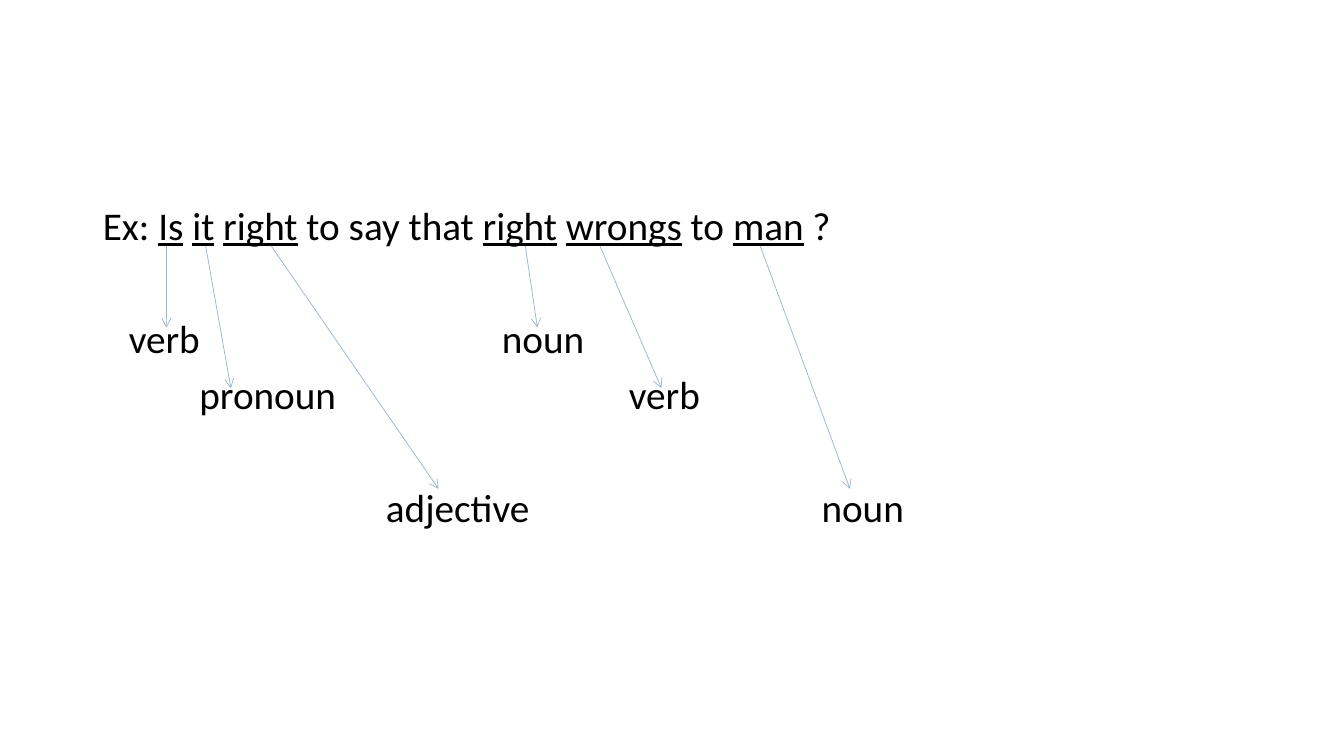
import pptx
import pptx.dml.color
import pptx.enum.shapes
import pptx.enum.text
import pptx.oxml
import pptx.oxml.ns
import pptx.util

Inches, Pt = pptx.util.Inches, pptx.util.Pt
RGB = pptx.dml.color.RGBColor.from_string

# (text, underlined)
SENTENCE = [
    ("Ex: ", False), ("Is", True), (" ", False), ("it", True), (" ", False),
    ("right", True), (" to say that ", False), ("right", True), (" ", False),
    ("wrongs", True), (" to ", False), ("man", True), (" ?", False),
]
# Each row: lines below the sentence, arrow tip height, labels.
# Each label: text, left edge, arrow start x, arrow tip x (inches).
LABEL_ROWS = [
    (2, 3.25, [("verb", 1.28, 1.65, 1.65), ("noun", 4.98, 5.21, 5.33)]),
    (3, 3.85, [("pronoun", 1.98, 2.04, 2.29), ("verb", 6.24, 5.95, 6.56)]),
    (5, 4.85, [("adjective", 3.83, 2.69, 4.35), ("noun", 8.15, 7.54, 8.43)]),
]
THEME = {
    "font": {"name": "Calibri", "size": Pt(28)},
    "text": RGB("000000"),
    "arrow": RGB("94B6D2"),
    "arrow_width": Pt(0.5),
}
BODY = {"left": 0.92, "top": 2, "width": 11.5, "height": 4.76}
FRAME = {
    "word_wrap": True,
    "auto_size": pptx.enum.text.MSO_AUTO_SIZE.NONE,
    "vertical_anchor": pptx.enum.text.MSO_ANCHOR.TOP,
}
PARAGRAPH = {"line_spacing": 0.9, "space_before": Pt(0)}
INSET = 0.1
LINE_PITCH = 0.56
LABEL_WIDTH, LABEL_HEIGHT = 1.8, 0.55
ARROW_TOP = 2.44
NS = pptx.oxml.ns.nsdecls("a")


def set_all(target, values):
    for name, value in values.items():
        setattr(target, name, value)


def write_line(sp, runs):
    """Fill a shape with one paragraph of (text, underlined) runs."""
    tf = sp.text_frame
    set_all(tf, FRAME)
    p = tf.paragraphs[0]
    set_all(p, PARAGRAPH)
    for text, underlined in runs:
        r = p.add_run()
        r.text = text
        set_all(r.font, THEME["font"])
        r.font.color.rgb = THEME["text"]
        r.font.underline = underlined
    return p


def remove_bullet(p):
    pPr = p._p.get_or_add_pPr()
    pPr.set("marL", "0")
    pPr.set("indent", "0")
    pPr.append(pptx.oxml.parse_xml(f"<a:buNone {NS}/>"))


def add_label(shapes, text, left, top):
    sp = shapes.add_textbox(
        *map(Inches, (left - INSET, top, LABEL_WIDTH, LABEL_HEIGHT)))
    write_line(sp, [(text, False)])


def add_arrow(shapes, x1, y1, x2, y2):
    arrow = shapes.add_connector(
        pptx.enum.shapes.MSO_CONNECTOR.STRAIGHT, *map(Inches, (x1, y1, x2, y2)))
    arrow.line.color.rgb = THEME["arrow"]
    arrow.line.width = THEME["arrow_width"]
    arrow.line._get_or_add_ln().append(
        pptx.oxml.parse_xml(f'<a:tailEnd {NS} type="arrow"/>'))
    arrow._element.spPr.append(pptx.oxml.parse_xml(f"<a:effectLst {NS}/>"))


def main():
    prs = pptx.Presentation()
    prs.slide_width, prs.slide_height = Inches(13.33), Inches(7.5)
    s = prs.slides.add_slide(prs.slide_layouts[1])
    title = s.shapes.title._element
    title.getparent().remove(title)

    body = s.placeholders[1]
    set_all(body, {name: Inches(value) for name, value in BODY.items()})
    remove_bullet(write_line(body, SENTENCE))

    for lines_below, tip_y, labels in LABEL_ROWS:
        row_top = BODY["top"] + lines_below * LINE_PITCH
        for text, left, start_x, tip_x in labels:
            add_label(s.shapes, text, left, row_top)
            add_arrow(s.shapes, start_x, ARROW_TOP, tip_x, tip_y)

    prs.save("out.pptx")


if __name__ == "__main__":
    main()
